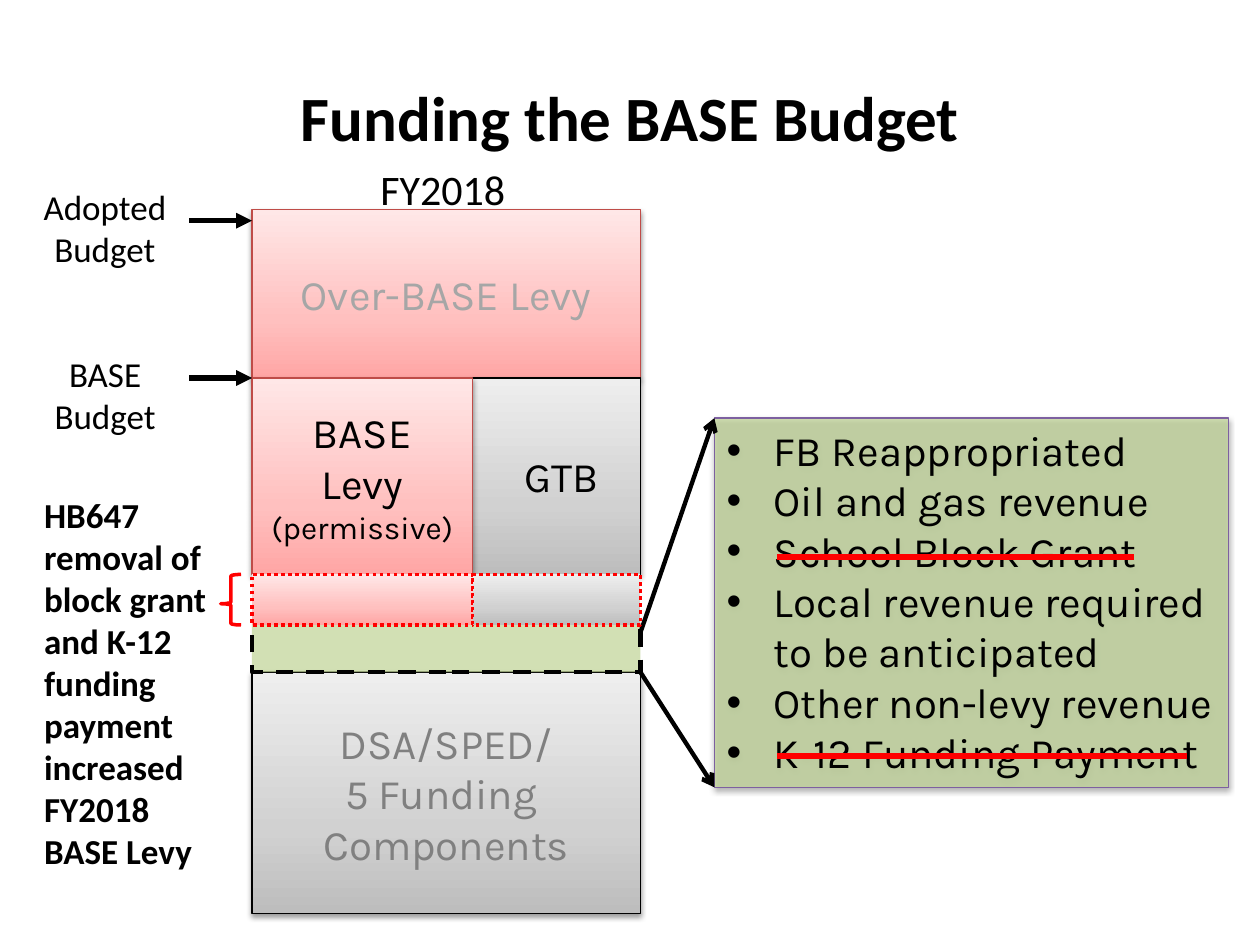
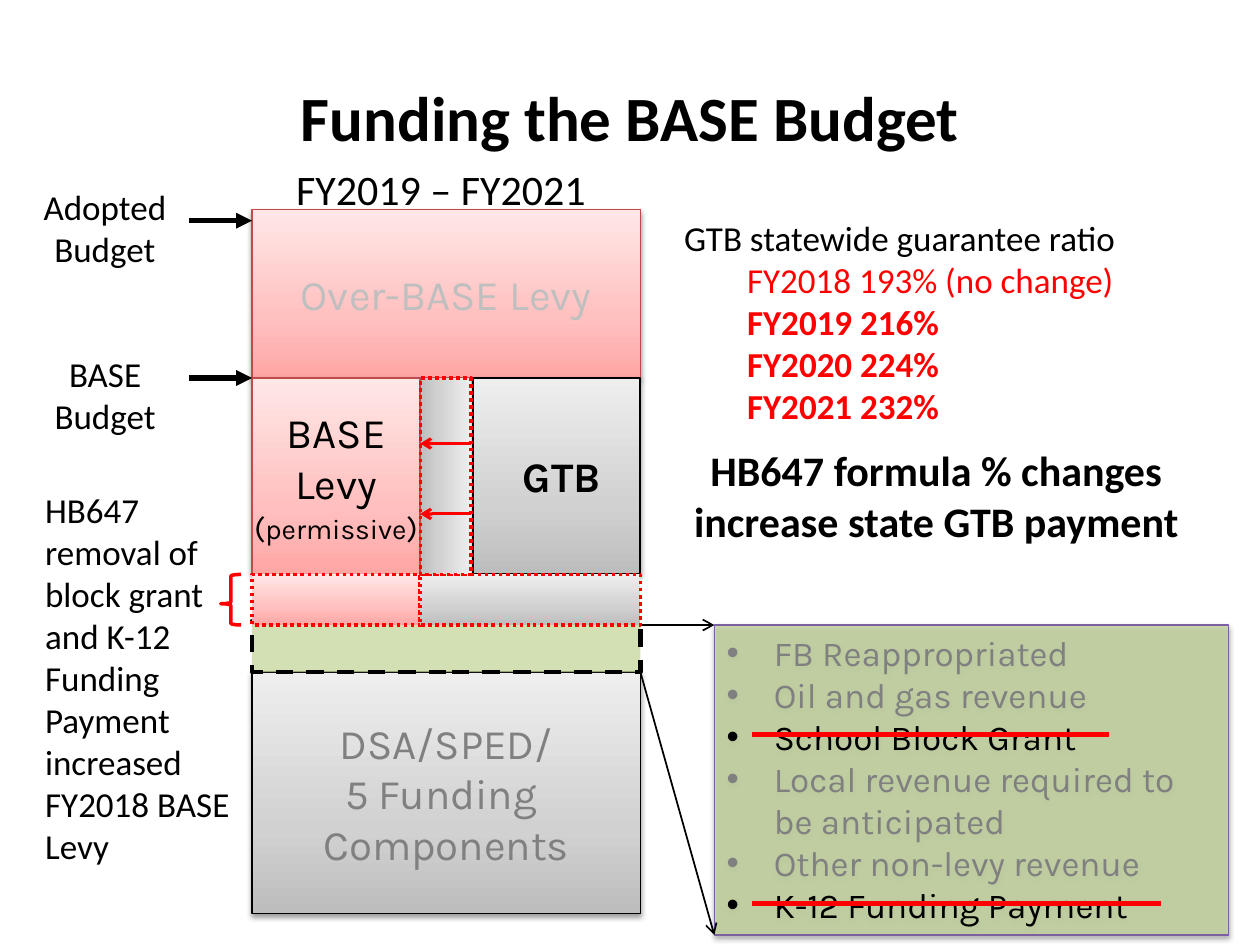
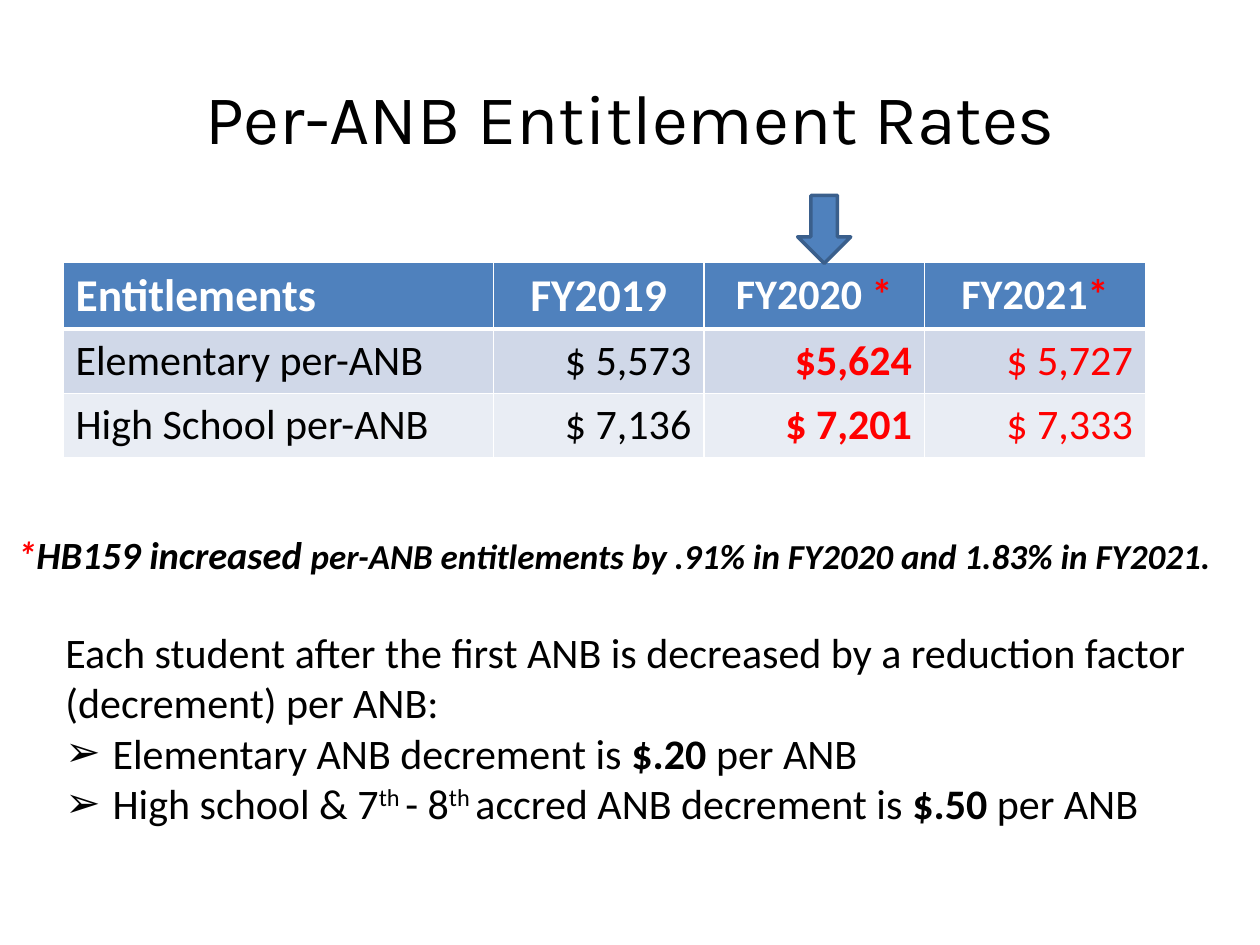
from copy import deepcopy

from lxml import etree
from pptx import Presentation
from pptx import util as u
from pptx.dml.color import RGBColor
from pptx.enum import dml, shapes, text
from pptx.oxml.ns import qn

BLACK = RGBColor(0x00, 0x00, 0x00)
WHITE = RGBColor(0xFF, 0xFF, 0xFF)
RED = RGBColor(0xFF, 0x00, 0x00)
GRAY = RGBColor(0x80, 0x80, 0x80)
SILVER = RGBColor(0xA6, 0xA6, 0xA6)
PALE = RGBColor(0xBF, 0xBF, 0xBF)
GREEN = RGBColor(0xC3, 0xD6, 0x9B)
PURPLE = RGBColor(0x7D, 0x60, 0xA0)
BRICK = RGBColor(0xBF, 0x4C, 0x48)
BLUE = RGBColor(0x4F, 0x81, 0xBD)
NAVY = RGBColor(0x3A, 0x5F, 0x8C)
BAND = RGBColor(0xD0, 0xD8, 0xE8)
LIGHT = RGBColor(0xE9, 0xED, 0xF4)

# Gradients run from the bottom edge up
ROSE = (RGBColor(0xFF, 0xA6, 0xA5), RGBColor(0xFF, 0xC0, 0xBF), RGBColor(0xFF, 0xE7, 0xE7))
STEEL = (RGBColor(0xBD, 0xBD, 0xBD), RGBColor(0xD1, 0xD1, 0xD1), RGBColor(0xEE, 0xEE, 0xEE))

BODY, HEAD = "Calibri", "Karla"
CENTER, RIGHT = text.PP_ALIGN.CENTER, text.PP_ALIGN.RIGHT
MIDDLE = text.MSO_ANCHOR.MIDDLE
FIT = text.MSO_AUTO_SIZE.SHAPE_TO_FIT_TEXT
RECT = shapes.MSO_SHAPE.RECTANGLE
DASH, DOTS = dml.MSO_LINE.DASH, dml.MSO_LINE.ROUND_DOT

# Edges of the budget column, in cm
LEFT, MID, END = 5.08, 9.53, 12.91
TOP, BASE, CUT, REV, DSA, FOOT = 4.23, 7.62, 11.58, 12.52, 13.55, 18.42
STRIP = 1.02
LIST = 14.4


def add(parent, tag, **attrs):
    return etree.SubElement(parent, qn(tag), {k: str(v) for k, v in attrs.items()})


def cm(*nums):
    return [u.Cm(n) for n in nums]


class Deck:
    def __init__(self):
        self.prs = Presentation()
        self.prs.slide_width, self.prs.slide_height = cm(25.4, 19.05)
        self.slide = None

    def page(self, title, font=BODY, size=36, bold=True):
        self.slide = self.prs.slides.add_slide(self.prs.slide_layouts[6])
        self.note((1.27, 0.76, 22.86, 3.18), [title], grow=False, anchor=MIDDLE,
                  font=font, size=size, bold=bold, align=CENTER)

    def words(self, frame, paras, font=BODY, size=24, color=BLACK, bold=False,
              align=None, mark=None):
        """Each paragraph is a string or a list of strings and (string, changes)."""
        for n, runs in enumerate(paras):
            para = frame.paragraphs[0] if n == 0 else frame.add_paragraph()
            if align is not None:
                para.alignment = align
            if mark:
                self.bullet(para, mark)
            for item in [runs] if isinstance(runs, str) else runs:
                words, more = (item, {}) if isinstance(item, str) else item
                run = para.add_run()
                run.text = words
                face = run.font
                face.name = font
                face.size = u.Pt(more.get("size", size))
                face.bold = more.get("bold", bold)
                face.italic = more.get("italic", False)
                face.color.rgb = more.get("color", color)
                if more.get("sup"):
                    run._r.get_or_add_rPr().set("baseline", "30000")

    def bullet(self, para, mark):
        props = para._p.get_or_add_pPr()
        props.set("marL", str(u.Cm(0.95)))
        props.set("indent", str(u.Cm(-0.95)))
        add(props, "a:buFont", typeface="Arial")
        add(props, "a:buChar", char=mark)

    def note(self, box, paras, wrap=True, grow=True, anchor=None, **style):
        frame = self.slide.shapes.add_textbox(*cm(*box)).text_frame
        frame.word_wrap = wrap
        if grow:
            frame.auto_size = FIT
        if anchor is not None:
            frame.vertical_anchor = anchor
        self.words(frame, paras, **style)
        return frame

    def shape(self, box, fill, line, width=0.75, kind=RECT, dash=None, clear=False, shade=False):
        item = self.slide.shapes.add_shape(kind, *cm(*box))
        item.shadow.inherit = False
        props = item._element.spPr
        if fill is None:
            item.fill.background()
        elif isinstance(fill, RGBColor):
            item.fill.solid()
            item.fill.fore_color.rgb = fill
            if clear:
                add(props.find(qn("a:solidFill"))[0], "a:alpha", val=75000)
        else:
            item.fill.gradient()
            item.fill.gradient_angle = 90
            stops = props.find(qn("a:gradFill")).find(qn("a:gsLst"))
            stops.append(deepcopy(stops[0]))
            for stop, place, color in zip(item.fill.gradient_stops, (0, 0.35, 1), fill):
                stop.position = place
                stop.color.rgb = color
        item.line.color.rgb = line
        item.line.width = u.Pt(width)
        if dash:
            item.line.dash_style = dash
        if shade:
            glow = add(props.find(qn("a:effectLst")), "a:outerShdw", blurRad=40000,
                       dist=20000, dir=5400000, rotWithShape=0)
            add(add(glow, "a:srgbClr", val="000000"), "a:alpha", val=38000)
        return item

    def block(self, box, fill, paras, line=BLACK, width=0.75, **style):
        frame = self.shape(box, fill, line, width, shade=True).text_frame
        frame.word_wrap = False
        frame.vertical_anchor = MIDDLE
        self.words(frame, paras, font=HEAD, align=CENTER, **style)

    def line(self, start, stop, color=BLACK, width=3, tip=None):
        item = self.slide.shapes.add_connector(
            shapes.MSO_CONNECTOR.STRAIGHT, *cm(*start, *stop))
        item.line.color.rgb = color
        item.line.width = u.Pt(width)
        props = item._element.spPr
        if tip:
            add(props.find(qn("a:ln")), "a:tailEnd", type=tip)
        add(props, "a:effectLst")

    def table(self, spot, cols, tall, rows):
        grid = self.slide.shapes.add_table(
            len(rows), len(cols), *cm(*spot, sum(cols), tall * len(rows))).table
        for col, wide in zip(grid.columns, cols):
            col.width = u.Cm(wide)
        for r, (fill, cells) in enumerate(rows):
            grid.rows[r].height = u.Cm(tall)
            for c, (runs, style) in enumerate(cells):
                cell = grid.cell(r, c)
                self.edges(cell, top=3 if r == 1 else 1, low=3 if r == 0 else 1)
                cell.fill.solid()
                cell.fill.fore_color.rgb = fill
                if r == 0:
                    cell.vertical_anchor = MIDDLE
                self.words(cell.text_frame, [runs], **style)

    def edges(self, cell, top, low):
        props = cell._tc.get_or_add_tcPr()
        for side, width in zip("LRTB", (1, 1, top, low)):
            edge = add(props, "a:ln" + side, w=u.Pt(width))
            add(add(edge, "a:solidFill"), "a:srgbClr", val=WHITE)


def budget(deck, label, left, over, split, levy, gtb, side, top, tall, size, tone, pen, start, bars):
    """Draw the budget column with its labels and the list of revenues."""
    deck.page("Funding the BASE Budget")
    wide = END - LEFT

    # Column blocks
    deck.block((LEFT, TOP, wide, BASE - TOP), ROSE, ["Over-BASE Levy"], line=BRICK, color=over)
    deck.block((LEFT, DSA, wide, FOOT - DSA), STEEL,
               ["DSA/SPED/", "5 Funding ", "Components"], color=GRAY)
    deck.block((MID, BASE, END - MID, CUT - BASE), STEEL, [" GTB"], **gtb)
    deck.block((LEFT, BASE, split - LEFT, CUT - BASE), ROSE, ["BASE", "Levy", levy], line=BRICK)
    deck.shape((LEFT, REV, wide, DSA - REV), GREEN, BLACK, 2.5, dash=DASH, clear=True)

    # Labels on the left
    for y, name, x, w in ((4.45, "Adopted", 0.58, 3.07), (BASE, "BASE", 0.81, 2.62)):
        deck.line((3.81, y), (LEFT, y), tip="triangle")
        deck.note((x, 3.61 if y < BASE else 6.99, w, 1.96), [name, "Budget"],
                  wrap=False, size=20, align=CENTER)
    deck.note((left, 3.18, END - left, 1.27), [label])
    spot, words, bold = side
    deck.note(spot, [words], size=20, bold=bold)

    # Revenue list, with the removed items struck out
    frame = deck.shape((LIST, top, 10.36, tall), GREEN, PURPLE, clear=True, shade=True).text_frame
    frame.word_wrap = True
    frame.auto_size = FIT
    frame.vertical_anchor = text.MSO_ANCHOR.TOP
    gone = {"color": BLACK}
    deck.words(frame, ["FB Reappropriated", "Oil and gas revenue", [("School Block Grant", gone)],
                       "Local revenue required to be anticipated", "Other non-levy revenue",
                       [("K-12 Funding Payment", gone)]],
               font=HEAD, size=size, color=tone, align=text.PP_ALIGN.LEFT, mark="•")
    deck.line((END, start), (LIST, top), width=pen, tip="arrow")
    deck.line((END, DSA), (LIST, top + tall), width=pen, tip="arrow")
    x, ys = bars
    for y, span in zip(ys, (7.2, 8.25)):
        deck.line((x, y), (x + span, y), RED)

    # Strip taken by the removed revenues
    for x, stop, fill in ((LEFT, split, ROSE), (split, END, STEEL)):
        deck.shape((x, CUT, stop - x, STRIP), fill, RED, 2, dash=DOTS)
    brace = deck.shape((4.45, CUT, 0.41, STRIP), None, RED, 2, kind=shapes.MSO_SHAPE.LEFT_BRACE)
    brace.adjustments[0], brace.adjustments[1] = 0.08, 0.58


def first(deck):
    budget(deck, "FY2018", 7.42, SILVER, MID, [("(permissive)", {"size": 18})], {},
           ((0.64, 9.83, 3.81, 7.95), "HB647 removal of block grant and K-12 funding payment "
            "increased FY2018 BASE Levy", True),
           8.43, 7.44, 24, BLACK, 2.5, 12.75, (15.67, (11.23, 15.24)))


def second(deck):
    split = 8.47
    big = {"size": 18}
    budget(deck, "FY2019 – FY2021", 5.72, PALE, split,
           [("(", big), ("permissive", {"size": 16}), (")", big)], {"bold": True, "width": 1},
           ((0.66, 9.73, 4.42, 7.95), "HB647 removal of block grant and K-12 Funding Payment "
            "increased FY2018 BASE Levy", False),
           12.6, 6.25, 20, GRAY, 1, 12.6, (15.16, (14.81, 18.21)))

    # Share moved from the levy to GTB
    shift = deck.shape((7.01, 9.09, CUT - BASE, STRIP), STEEL, RED, 2, dash=DOTS)
    shift.rotation = 90
    for y in (8.94, 10.36):
        deck.line((9.5, y), (split, y), RED, 1.75, "arrow")

    # Ratios and message
    rates = ["FY2018 193% (no change)"] + [
        [(f"FY{year} {rate}%", {"bold": True})]
        for year, rate in ((2019, 216), (2020, 224), (2021, 232))]
    frame = deck.note((13.54, 4.23, 9.96, 4.52), ["GTB statewide guarantee ratio"], size=20)
    for runs in rates:
        para = frame.add_paragraph()
        para._p.get_or_add_pPr().set("marL", str(u.Cm(1.27)))
        words, more = (runs, {}) if isinstance(runs, str) else runs[0]
        run = para.add_run()
        run.text = words
        run.font.name, run.font.size = BODY, u.Pt(20)
        run.font.bold = more.get("bold", False)
        run.font.color.rgb = RED
    deck.note((12.98, 8.84, 11.79, 2.31), ["HB647 formula % changes increase state GTB payment"],
              bold=True, align=CENTER)


def third(deck):
    deck.page("Per-ANB Entitlement Rates", HEAD, 40, False)

    # Rates by year
    head = {"color": WHITE, "bold": True}
    mid = {**head, "align": CENTER}
    star = ("*", {"color": RED})
    rows = [(BLUE, [("Entitlements", {**head, "size": 26}), ("FY2019", {**mid, "size": 26}),
                    (["FY2020 ", star], mid), (["FY2021", star], mid)])]
    looks = ({}, {"align": RIGHT}, {"align": RIGHT, "color": RED, "bold": True},
             {"align": RIGHT, "color": RED})
    for fill, *cells in ((BAND, "Elementary per-ANB", "$ 5,573", "$5,624", "$ 5,727"),
                         (LIGHT, "High School per-ANB", "$ 7,136", "$ 7,201", "$ 7,333")):
        rows.append((fill, list(zip(cells, looks))))
    deck.table((1.27, 5.28), (8.68, 4.24, 4.45, 4.45), 1.3, rows)

    # Footnote to the table
    slant = {"italic": True}
    deck.note((0.1, 10.59, 24.66, 1.19),
              [[("*", {**slant, "color": RED}), ("HB159 increased ", slant),
                ("per-ANB entitlements by .91% in FY2020 and 1.83% in FY2021.",
                 {**slant, "size": 20})]], size=22, bold=True)
    deck.shape((16.08, 3.94, 1.07, 1.37), BLUE, NAVY, 2, kind=shapes.MSO_SHAPE.DOWN_ARROW)

    # Decrements
    strong, sup = {"bold": True}, {"sup": True}
    frame = deck.note((1.07, 12.5, 23.29, 4.37),
                      ["Each student after the first ANB is decreased by a reduction factor "
                       "(decrement) per ANB:",
                       ["Elementary ANB decrement is ", ("$.20", strong), " per ANB"],
                       ["High school & 7", ("th ", sup), "- 8", ("th ", sup),
                        "accred ANB decrement is ", ("$.50", strong), " per ANB"]])
    for para in frame.paragraphs[1:]:
        deck.bullet(para, "➢")


def main():
    deck = Deck()
    for draw in (first, second, third):
        draw(deck)
    deck.prs.save("out.pptx")


if __name__ == "__main__":
    main()
